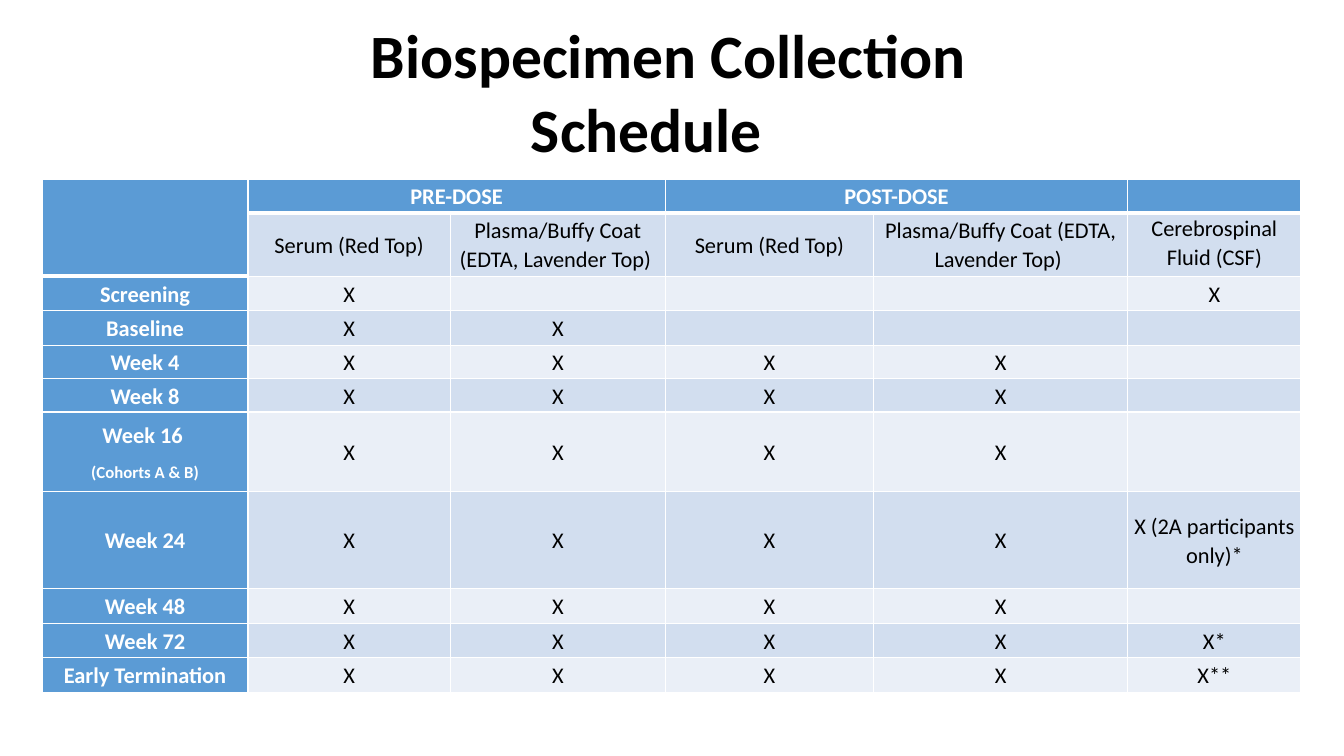
from lxml import etree
from pptx import Presentation
from pptx.dml.color import RGBColor
from pptx.enum import text
from pptx.oxml import ns
from pptx.util import Pt

FONT = "Calibri"
WHITE, BLACK = "FFFFFF", "000000"
BLUE, LIGHT, PALE = "5B9BD5", "D2DEEF", "EAEFF7"

COLUMN_WIDTHS = [146.9, 144.7, 153.4, 149, 181.4, 123.8]
ROW_HEIGHTS = [23.8, 45.4, 24.7, 24.7, 23.8, 23.8, 56.9, 69.3, 24.7, 24.7, 24.7]
PLASMA = "Plasma/Buffy Coat (EDTA, Lavender Top) "
HEADERS = [
    ["", "PRE-DOSE", "", "POST-DOSE", "", ""],
    ["", "Serum (Red Top)", PLASMA, "Serum (Red Top)", PLASMA,
     "Cerebrospinal Fluid (CSF)"],
]
# Visit, number of blood samples marked from the left, CSF entry
VISITS = [
    ("Screening", 1, "X"),
    ("Baseline", 2, ""),
    ("Week 4", 4, ""),
    ("Week 8", 4, ""),
    ("Week 16 \n(Cohorts A & B)", 4, ""),
    ("Week 24", 4, "X (2A participants only)*"),
    ("Week 48", 4, ""),
    ("Week 72", 4, "X*"),
    ("Early Termination", 4, "X**"),
]


def color(value):
    return RGBColor.from_string(value)


def format_span(span, size, ink, bold):
    span.font.name = FONT
    span.font.size = Pt(size)
    span.font.bold = bold
    span.font.color.rgb = color(ink)


def add_title(page, words):
    box = page.shapes.add_textbox(Pt(150.5), Pt(34.6), Pt(622.8), Pt(60.5))
    frame = box.text_frame
    frame.word_wrap = True
    frame.auto_size = text.MSO_AUTO_SIZE.SHAPE_TO_FIT_TEXT
    frame.vertical_anchor = text.MSO_ANCHOR.MIDDLE
    frame.text = words
    para = frame.paragraphs[0]
    para.alignment = text.PP_ALIGN.CENTER
    para._p.get_or_add_pPr().set("indent", str(Pt(31.7)))
    format_span(para.runs[0], 44, BLACK, True)


def set_borders(cell, top, bottom):
    properties = cell._tc.get_or_add_tcPr()
    for side, width in (("L", 1), ("R", 1), ("T", top), ("B", bottom)):
        line = etree.SubElement(properties, ns.qn("a:ln" + side), w=str(Pt(width)))
        fill = etree.SubElement(line, ns.qn("a:solidFill"))
        etree.SubElement(fill, ns.qn("a:srgbClr"), val=WHITE)


def fill_cell(cell, words, fill, ink, bold, inset):
    cell.fill.solid()
    cell.fill.fore_color.rgb = color(fill)
    cell.margin_left = cell.margin_right = Pt(inset)
    cell.margin_top = cell.margin_bottom = 0
    cell.vertical_anchor = text.MSO_ANCHOR.MIDDLE
    cell.text_frame.text = words
    for index, para in enumerate(cell.text_frame.paragraphs):
        para.alignment = text.PP_ALIGN.CENTER
        para.line_spacing = 1.07
        para.space_after = Pt(8)
        for span in para.runs:
            format_span(span, 12 if index else 16, ink, bold)
        if not para.runs:
            # Keeps empty cells from stretching their row
            etree.SubElement(para._p, ns.qn("a:endParaRPr"), sz="1600")


def add_schedule(page):
    rows = HEADERS + [
        [visit] + ["X"] * count + [""] * (4 - count) + [csf]
        for visit, count, csf in VISITS
    ]
    table = page.shapes.add_table(
        len(rows), len(COLUMN_WIDTHS), Pt(30.2), Pt(128.2),
        Pt(sum(COLUMN_WIDTHS)), Pt(sum(ROW_HEIGHTS))).table
    for column, width in zip(table.columns, COLUMN_WIDTHS):
        column.width = Pt(width)
    for row, height in zip(table.rows, ROW_HEIGHTS):
        row.height = Pt(height)

    for r, row in enumerate(rows):
        for c, words in enumerate(row):
            cell = table.cell(r, c)
            heading = r == 0 or c == 0
            # Thick rule below the header row and the corner cell
            bottom = 3 if r == 0 or (r, c) == (1, 0) else 1
            top = 3 if r == 1 or (r, c) == (2, 0) else 1
            set_borders(cell, top, bottom)
            fill = BLUE if heading else LIGHT if r % 2 else PALE
            flush = c > 2 or (c == 0 and r in (2, 3))
            fill_cell(cell, words, fill, WHITE if heading else BLACK,
                      heading, 0 if flush else 5.4)
    table.cell(1, 5).vertical_anchor = text.MSO_ANCHOR.TOP

    # Merged headings
    table.cell(0, 0).merge(table.cell(1, 0))
    table.cell(0, 1).merge(table.cell(0, 2))
    table.cell(0, 3).merge(table.cell(0, 4))


def main():
    deck = Presentation()
    deck.slide_width, deck.slide_height = Pt(960), Pt(540)
    page = deck.slides.add_slide(deck.slide_layouts[6])
    add_title(page, "Biospecimen Collection Schedule")
    add_schedule(page)
    deck.save("out.pptx")


if __name__ == "__main__":
    main()
